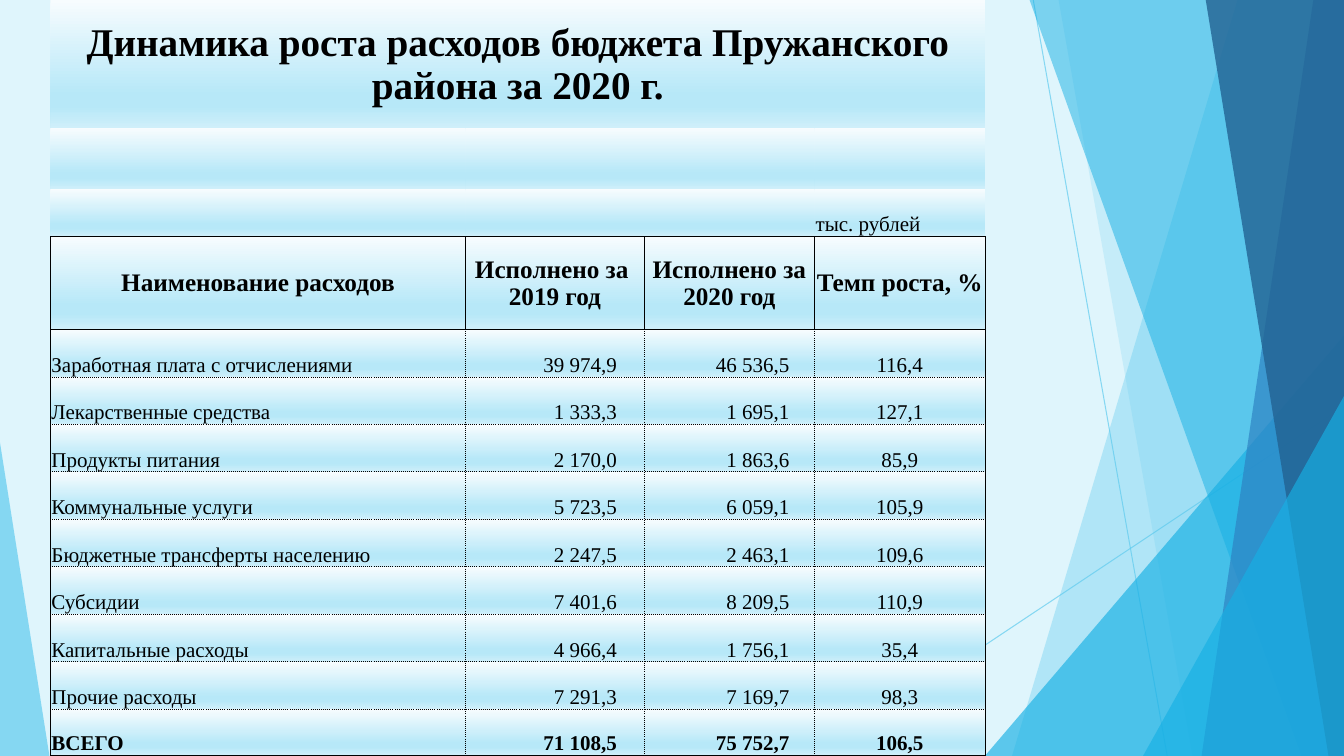
from dataclasses import dataclass

from lxml import etree
from pptx import Presentation
from pptx.dml.color import RGBColor
from pptx.enum.shapes import MSO_CONNECTOR, MSO_SHAPE
from pptx.enum.text import MSO_ANCHOR, PP_ALIGN
from pptx.oxml.ns import qn
from pptx.util import Inches, Pt

LEFT, CENTER, RIGHT = PP_ALIGN.LEFT, PP_ALIGN.CENTER, PP_ALIGN.RIGHT
MIDDLE, BOTTOM = MSO_ANCHOR.MIDDLE, MSO_ANCHOR.BOTTOM
TRIANGLE = MSO_SHAPE.ISOSCELES_TRIANGLE
STRAIGHT = MSO_CONNECTOR.STRAIGHT

SLIDE_WIDTH, SLIDE_HEIGHT = Inches(13.33), Inches(7.5)
FONT = "Times New Roman"
BLACK, SKY, AZURE = "000000", "5FCBEF", "17B0E4"
GRADIENT = [(0, "F7FCFE"), (74, "B7E8F8"), (83, "B7E8F8"), (100, "CFEFFA")]
TABLE_LEFT = 3.75
FACET_TOP = -0.13
HEADER_ROW = 3


@dataclass
class Ray:
    start: tuple[float, float]
    end: tuple[float, float]


@dataclass
class Facet:
    top_left: float
    bottom_left: float
    color: str
    opacity: int


@dataclass
class Wedge:
    left: float
    top: float
    width: float
    apex: int
    color: str
    opacity: int


@dataclass
class Column:
    width: float
    align: PP_ALIGN
    right_inset: float


@dataclass
class Style:
    size: int
    bold: bool
    align: PP_ALIGN
    anchor: MSO_ANCHOR


RAYS = [Ray((76.88, 0), (86.85, 100)), Ray((100, 53.73), (60.9, 100))]
DECORATIONS = [
    Facet(92.1, 75.3, SKY, 36),
    Facet(78.75, 88.73, SKY, 20),
    Wedge(73.28, 44.4, 26.72, 1, AZURE, 66),
    Facet(76.58, 96.83, AZURE, 50),
    Facet(97.73, 89.4, "2E83C3", 70),
    Facet(89.7, 98.85, "226292", 80),
    Wedge(85.05, 52.4, 14.95, 1, AZURE, 66),
    Wedge(0, 58.53, 3.68, 0, SKY, 70),
]
COLUMNS = [
    Column(30.9, LEFT, 0.08),
    Column(13.28, RIGHT, 2.03),
    Column(12.68, RIGHT, 1.88),
    Column(12.68, CENTER, 0.08),
]
ROWS = [
    ["Динамика роста расходов бюджета Пружанского района за 2020 г.", "", "", ""],
    ["", "", "", ""],
    ["", "", "", "тыс. рублей"],
    ["Наименование расходов", "Исполнено за \n2019 год", "Исполнено за 2020 год", "Темп роста, %"],
    ["Заработная плата с отчислениями", "39 974,9", "46 536,5", "116,4"],
    ["Лекарственные средства", "1 333,3", "1 695,1", "127,1"],
    ["Продукты питания", "2 170,0", "1 863,6", "85,9"],
    ["Коммунальные услуги", "5 723,5", "6 059,1", "105,9"],
    ["Бюджетные трансферты населению", "2 247,5", "2 463,1", "109,6"],
    ["Субсидии", "7 401,6", "8 209,5", "110,9"],
    ["Капитальные расходы", "4 966,4", "1 756,1", "35,4"],
    ["Прочие расходы", "7 291,3", "7 169,7", "98,3"],
    ["ВСЕГО", "71 108,5", "75 752,7", "106,5"],
]
LAST_ROW, LAST_COLUMN = len(ROWS) - 1, len(COLUMNS) - 1
ROW_HEIGHTS = [16.93, 8.07, 6.28, 12.3] + [6.28] * (LAST_ROW - HEADER_ROW - 1) + [6.1]


def across(share: float) -> int:
    return round(SLIDE_WIDTH * share / 100)


def down(share: float) -> int:
    return round(SLIDE_HEIGHT * share / 100)


def rgb(color: str) -> RGBColor:
    return RGBColor.from_string(color)


def set_opacity(element, opacity: int) -> None:
    for color in element.iter(qn("a:srgbClr")):
        etree.SubElement(color, qn("a:alpha"), val=str(opacity * 1000))


def draw_ray(page, ray: Ray) -> None:
    line = page.shapes.add_connector(
        STRAIGHT, across(ray.start[0]), down(ray.start[1]), across(ray.end[0]), down(ray.end[1]))
    line.line.color.rgb = rgb(SKY)
    line.line.width = Pt(0.75)
    properties = line._element.spPr
    set_opacity(properties, 70)
    etree.SubElement(properties, qn("a:effectLst"))


def draw_decoration(page, part: Facet | Wedge) -> None:
    if isinstance(part, Facet):
        builder = page.shapes.build_freeform(across(part.top_left), down(FACET_TOP))
        builder.add_line_segments([
            (across(100), down(FACET_TOP)),
            (across(100), down(100)),
            (across(part.bottom_left), down(100)),
        ])
        shape = builder.convert_to_shape()
    else:
        shape = page.shapes.add_shape(
            TRIANGLE, across(part.left), down(part.top), across(part.width), down(100 - part.top))
        shape.adjustments[0] = part.apex
    shape.shadow.inherit = False
    shape.fill.solid()
    shape.fill.fore_color.rgb = rgb(part.color)
    set_opacity(shape._element.spPr, part.opacity)
    shape.line.fill.background()


def edge_dash(row: int, column: int, side: str) -> str | None:
    if row < HEADER_ROW:
        return "solid" if row == HEADER_ROW - 1 and side == "B" else None
    outer = {
        "L": column == 0,
        "R": column == LAST_COLUMN,
        "T": row == HEADER_ROW + 1,
        "B": row == LAST_ROW,
    }
    return "solid" if row == HEADER_ROW or outer[side] else "sysDot"


def paint_cell(cell, row: int, column: int) -> None:
    properties = cell._tc.get_or_add_tcPr()
    for side in "LRTB":
        dash = edge_dash(row, column, side)
        edge = etree.SubElement(properties, qn(f"a:ln{side}"), w=str(Pt(0.5)))
        if dash is None:
            etree.SubElement(edge, qn("a:noFill"))
            continue
        ink = etree.SubElement(edge, qn("a:solidFill"))
        etree.SubElement(ink, qn("a:srgbClr"), val=BLACK)
        etree.SubElement(edge, qn("a:prstDash"), val=dash)
    gradient = etree.SubElement(properties, qn("a:gradFill"), rotWithShape="1")
    stops = etree.SubElement(gradient, qn("a:gsLst"))
    for position, color in GRADIENT:
        stop = etree.SubElement(stops, qn("a:gs"), pos=str(position * 1000))
        etree.SubElement(stop, qn("a:srgbClr"), val=color)
    etree.SubElement(gradient, qn("a:lin"), ang=str(90 * 60000), scaled="0")


def cell_style(row: int, column: int) -> Style:
    if row == 0:
        return Style(28, True, CENTER, MIDDLE)
    if row < HEADER_ROW:
        return Style(15, False, LEFT, BOTTOM)
    if row == HEADER_ROW:
        return Style(18, True, CENTER, MIDDLE)
    return Style(15, row == LAST_ROW, COLUMNS[column].align, BOTTOM)


def write_cell(cell, text: str, style: Style, right_inset: float) -> None:
    cell.margin_left, cell.margin_right = across(0.08), across(right_inset)
    cell.margin_top, cell.margin_bottom = down(0.13), 0
    cell.vertical_anchor = style.anchor
    frame = cell.text_frame
    for index, line in enumerate(text.splitlines()):
        para = frame.add_paragraph() if index else frame.paragraphs[0]
        para.alignment = style.align
        span = para.add_run()
        span.text = line
        span.font.name = FONT
        span.font.size = Pt(style.size)
        span.font.bold = style.bold
        span.font.color.rgb = rgb(BLACK)


def draw_table(page) -> None:
    width = sum(column.width for column in COLUMNS)
    table = page.shapes.add_table(
        len(ROWS), len(COLUMNS), across(TABLE_LEFT), 0, across(width), down(sum(ROW_HEIGHTS))).table
    table.first_row = table.horz_banding = False
    for index, column in enumerate(COLUMNS):
        table.columns[index].width = across(column.width)
    table.cell(0, 0).merge(table.cell(0, LAST_COLUMN))
    for row, texts in enumerate(ROWS):
        table.rows[row].height = down(ROW_HEIGHTS[row])
        for column, text in enumerate(texts):
            cell = table.cell(row, column)
            inset = COLUMNS[column].right_inset if row > HEADER_ROW else 0.08
            write_cell(cell, text, cell_style(row, column), inset)
            paint_cell(cell, row, column)


def main() -> None:
    deck = Presentation()
    deck.slide_width, deck.slide_height = SLIDE_WIDTH, SLIDE_HEIGHT
    page = deck.slides.add_slide(deck.slide_layouts[6])
    page.background.fill.solid()
    page.background.fill.fore_color.rgb = rgb("DFF5FC")
    for ray in RAYS:
        draw_ray(page, ray)
    for part in DECORATIONS:
        draw_decoration(page, part)
    draw_table(page)
    deck.save("out.pptx")


if __name__ == "__main__":
    main()
